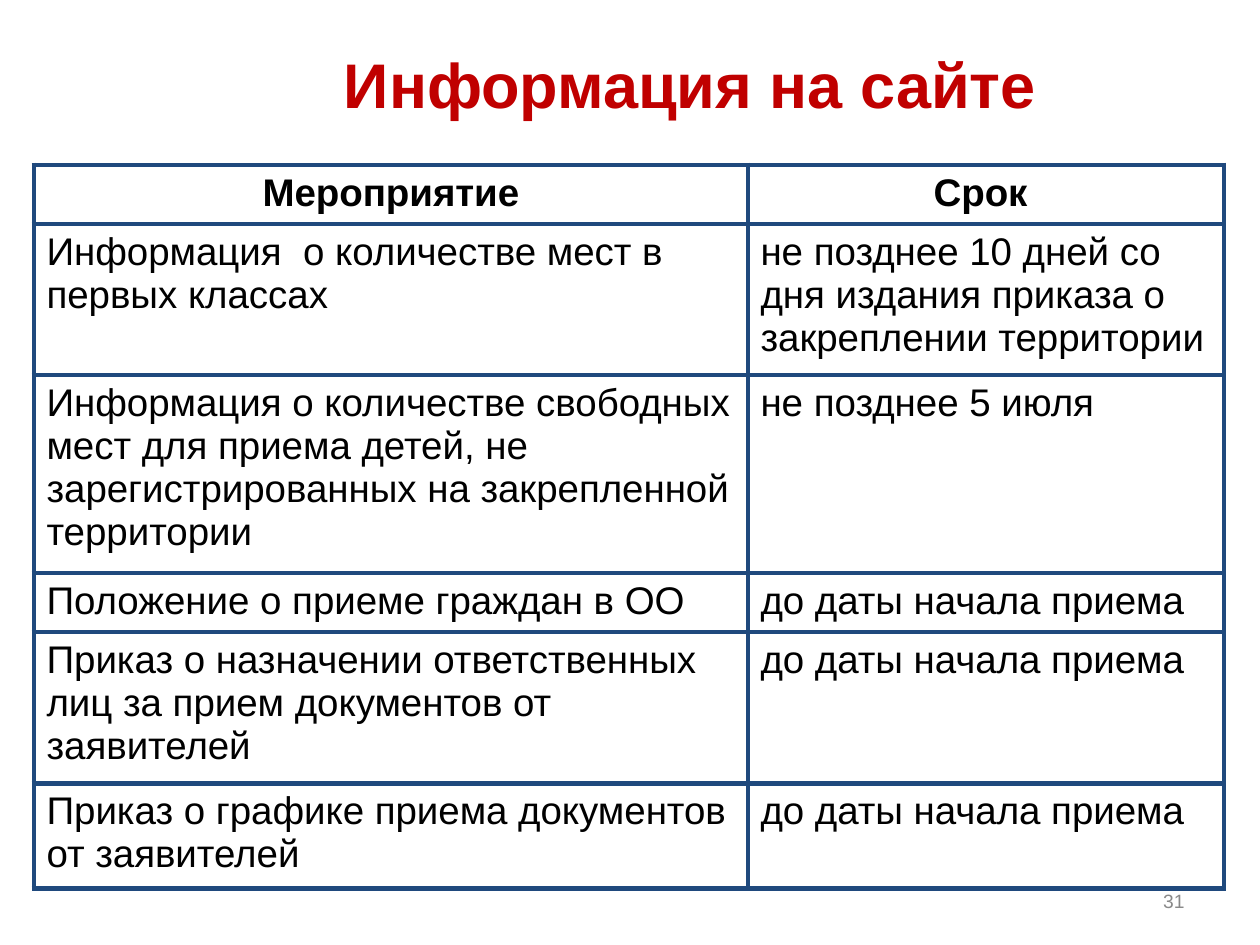
from lxml.etree import SubElement
from pptx import Presentation
from pptx.dml.color import RGBColor
from pptx.enum.text import MSO_ANCHOR, PP_ALIGN
from pptx.oxml.ns import qn
from pptx.util import Emu, Pt

EMU_PER_PX = 914400 // 126


def px(length):
    """Turn whole pixels into EMU."""
    return Emu(length * EMU_PER_PX)


def color(hex_value):
    """Turn a hex string into a colour."""
    return RGBColor.from_string(hex_value)


def write(frame, text, size=22, ink="000000", bold=False, align=PP_ALIGN.LEFT, font="Arial"):
    """Write one formatted paragraph into a text frame."""
    paragraph = frame.paragraphs[0]
    paragraph.alignment = align
    run = paragraph.add_run()
    run.text = text
    run.font.name = font
    run.font.size = Pt(size)
    run.font.bold = bold
    run.font.color.rgb = color(ink)


class SlideBuilder:
    """Hold the table style and the current slide."""

    paper = "FFFFFF"
    border = "1F497D"
    border_width = Pt(3)

    def __init__(self, slide):
        """Start on a plain slide."""
        self.slide = slide
        background = slide.background.fill
        background.solid()
        background.fore_color.rgb = color(self.paper)

    def text(self, text, left, top, width, height, **style):
        """Add a wrapped, vertically centred text box."""
        box = self.slide.shapes.add_textbox(px(left), px(top), px(width), px(height))
        frame = box.text_frame
        frame.word_wrap = True
        frame.vertical_anchor = MSO_ANCHOR.MIDDLE
        write(frame, text, **style)

    def outline(self, cell):
        """Draw all four borders of a cell."""
        properties = cell._tc.get_or_add_tcPr()
        for position, side in enumerate(("a:lnL", "a:lnR", "a:lnT", "a:lnB")):
            line = properties.makeelement(qn(side), {"w": str(self.border_width)})
            fill = SubElement(line, qn("a:solidFill"))
            SubElement(fill, qn("a:srgbClr"), val=self.border)
            properties.insert(position, line)

    def table(self, rows, left, top, widths, heights):
        """Add a bordered table with a bold, centred header row."""
        table = self.slide.shapes.add_table(
            len(rows), len(widths), px(left), px(top), px(sum(widths)), px(sum(heights))
        ).table
        for column, width in zip(table.columns, widths):
            column.width = px(width)
        for index, (row, height, texts) in enumerate(zip(table.rows, heights, rows)):
            row.height = px(height)
            header = index == 0
            for cell, text in zip(row.cells, texts):
                cell.fill.solid()
                cell.fill.fore_color.rgb = color(self.paper)
                self.outline(cell)
                align = PP_ALIGN.CENTER if header else PP_ALIGN.LEFT
                write(cell.text_frame, text, bold=header, align=align)


def main():
    """Build and save the slide."""
    presentation = Presentation()
    presentation.slide_width = px(1260)
    presentation.slide_height = px(945)
    builder = SlideBuilder(presentation.slides.add_slide(presentation.slide_layouts[6]))

    builder.text("Информация на сайте", 174, 35, 1032, 97,
                 size=36, ink="C00000", bold=True, align=PP_ALIGN.CENTER)
    builder.text("31", 903, 876, 294, 50, size=11, ink="898989", align=PP_ALIGN.RIGHT)

    before_admission = "до даты начала приема"
    schedule = [
        ("Мероприятие", "Срок "),
        ("Информация  о количестве мест в первых классах",
         "не позднее 10 дней со дня издания приказа о закреплении территории"),
        ("Информация о количестве свободных мест для приема детей, "
         "не зарегистрированных на закрепленной территории",
         "не позднее 5 июля"),
        ("Положение о приеме граждан в ОО", before_admission),
        ("Приказ о назначении ответственных лиц за прием документов от заявителей",
         before_admission),
        ("Приказ о графике приема документов от заявителей", before_admission),
    ]
    builder.table(schedule, 34, 165, widths=(714, 476), heights=(59, 151, 198, 59, 151, 105))
    presentation.save("out.pptx")


if __name__ == "__main__":
    main()
